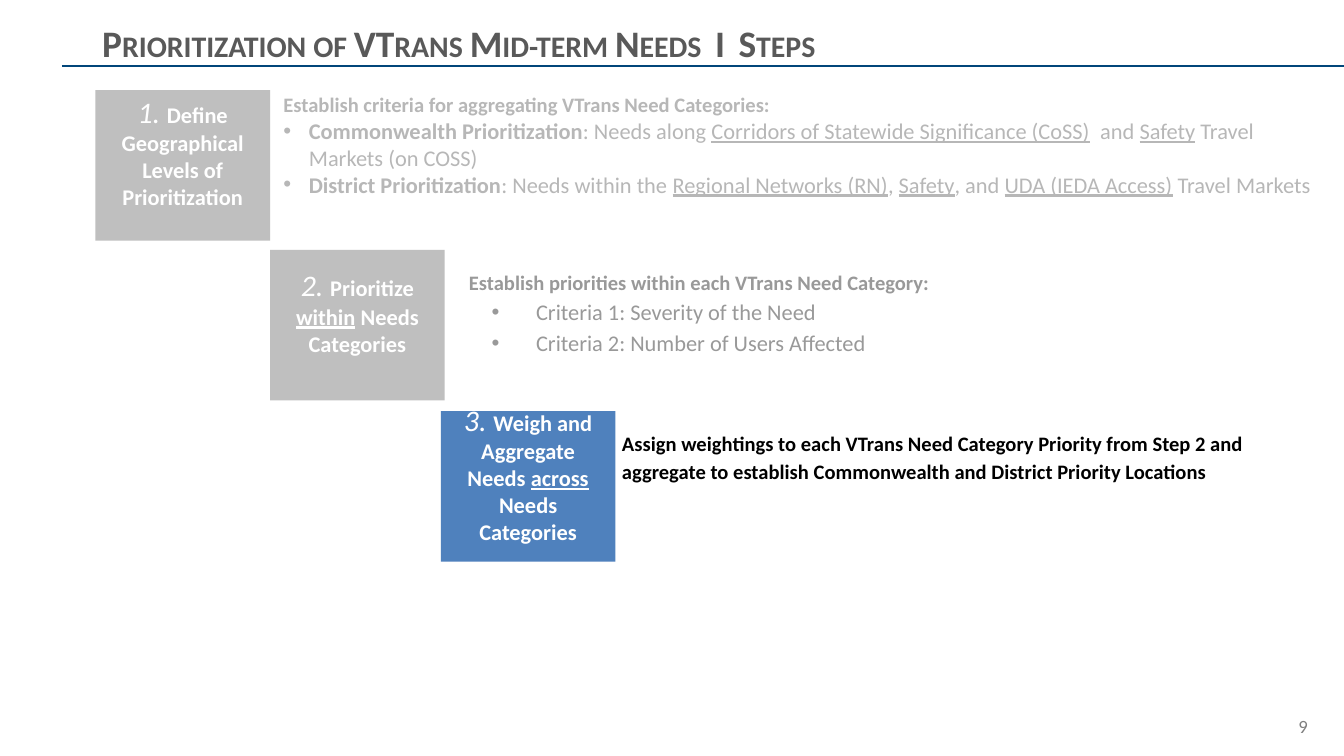
import pptx
import pptx.dml.color
import pptx.enum.shapes
import pptx.enum.text
import pptx.oxml
import pptx.oxml.ns
import pptx.util
from dataclasses import dataclass
from pptx.util import Inches


@dataclass(frozen=True)
class Theme:
    font: str = "Calibri"
    rule: str = "01467A"
    title: str = "595959"
    number: str = "7F7F7F"
    muted_box: str = "BFBFBF"
    active_box: str = "4F81BD"
    on_box: str = "FFFFFF"
    first_text: str = "B7B7B7"
    second_text: str = "999999"
    active_text: str = "000000"
    title_size: int = 20
    step_size: int = 16
    body_size: int = 12
    lead_size: int = 11
    number_size: int = 10


theme = Theme()
ALIGN = pptx.enum.text.PP_ALIGN
ANCHOR = pptx.enum.text.MSO_ANCHOR


def add_text_box(left, top, width, height, anchor=ANCHOR.TOP):
    box = slide.shapes.add_textbox(Inches(left), Inches(top), Inches(width), Inches(height))
    box.text_frame.word_wrap = True
    box.text_frame.vertical_anchor = anchor
    return box.text_frame


def write_runs(paragraph, runs, color):
    """Write (text, size, style) runs; style letters are b, i and u."""
    for text, size, style in runs:
        run = paragraph.add_run()
        run.text = text
        run.font.name = theme.font
        run.font.size = pptx.util.Pt(size)
        run.font.color.rgb = pptx.dml.color.RGBColor.from_string(color)
        run.font.bold = "b" in style
        run.font.italic = "i" in style
        run.font.underline = "u" in style


# Widescreen slide, 16:9
presentation = pptx.Presentation()
presentation.slide_width = Inches(10)
presentation.slide_height = Inches(10) * 9 // 16
slide = presentation.slides.add_slide(presentation.slide_layouts[6])

# Title rule
rule = slide.shapes.add_connector(
    pptx.enum.shapes.MSO_CONNECTOR.STRAIGHT,
    Inches(0.46), Inches(0.49), Inches(10), Inches(0.49))
rule.line.color.rgb = pptx.dml.color.RGBColor.from_string(theme.rule)
rule.line.width = pptx.util.Pt(0.75)
rule._element.spPr.append(pptx.oxml.parse_xml(
    f'<a:effectLst {pptx.oxml.ns.nsdecls("a")}/>'))

# Title in small capitals
frame = add_text_box(0.69, 0.15, 8.62, 0.34, ANCHOR.MIDDLE)
frame.margin_left = frame.margin_right = Inches(0.07)
frame.margin_top = frame.margin_bottom = Inches(0.04)
write_runs(frame.paragraphs[0],
           [("Prioritization of VTrans Mid-term Needs  I  Steps", theme.title_size, "b")],
           theme.title)
frame.paragraphs[0].runs[0].font._element.set("cap", "small")

# Staircase of step boxes
size = theme.body_size
steps = [
    (0.71, 0.67, theme.muted_box,
     [("Define Geographical Levels of Prioritization", size, "b")]),
    (2.01, 1.86, theme.muted_box,
     [("Prioritize ", size, "b"), ("within", size, "bu"), (" Needs Categories", size, "b")]),
    (3.28, 3.06, theme.active_box,
     [("Weigh and Aggregate Needs ", size, "b"), ("across", size, "bu"),
      (" Needs Categories", size, "b")]),
]
for number, (left, top, fill, label) in enumerate(steps, start=1):
    box = slide.shapes.add_shape(
        pptx.enum.shapes.MSO_SHAPE.RECTANGLE,
        Inches(left), Inches(top), Inches(1.3), Inches(1.12))
    box.shadow.inherit = False
    box.fill.solid()
    box.fill.fore_color.rgb = pptx.dml.color.RGBColor.from_string(fill)
    box.line.fill.background()
    frame = box.text_frame
    frame.word_wrap = True
    frame.vertical_anchor = ANCHOR.MIDDLE
    frame.margin_bottom = Inches(0.25)
    frame.paragraphs[0].alignment = ALIGN.CENTER
    write_runs(frame.paragraphs[0],
               [(f"{number}. ", theme.step_size, "i")] + label, theme.on_box)

# Descriptions: place, colour, bullet indent, bullet line spacing, lead line, bullets
descriptions = [
    ((2.01, 0.61, 7.99, 0.71), theme.first_text, 0.19, 1.0,
     "Establish criteria for aggregating VTrans Need Categories:",
     [[("Commonwealth Prioritization", size, "b"), (": Needs along ", size, ""),
       ("Corridors of Statewide Significance (CoSS)", size, "u"), ("  and ", size, ""),
       ("Safety", size, "u"), (" Travel Markets (on COSS)", size, "")],
      [("District Prioritization", size, "b"), (": Needs within the ", size, ""),
       ("Regional Networks (RN)", size, "u"), (", ", size, ""),
       ("Safety", size, "u"), (", and ", size, ""),
       ("UDA (IEDA Access)", size, "u"), (" Travel Markets", size, "")]]),
    ((3.39, 1.93, 6.31, 0.99), theme.second_text, 0.5, 1.15,
     "Establish priorities within each VTrans Need Category:",
     [[("Criteria 1: Severity of the Need", size, "")],
      [("Criteria 2: Number of Users Affected", size, "")]]),
    ((4.53, 3.13, 5.2, 0.3), theme.active_text, 0, 1.15,
     "Assign weightings to each VTrans Need Category Priority from Step 2 and "
     "aggregate to establish Commonwealth and District Priority Locations", []),
]
for place, color, indent, spacing, lead, bullets in descriptions:
    frame = add_text_box(*place)
    frame.paragraphs[0].line_spacing = 1.15
    write_runs(frame.paragraphs[0], [(lead, theme.lead_size, "b")], color)
    for runs in bullets:
        paragraph = frame.add_paragraph()
        properties = paragraph._p.get_or_add_pPr()
        properties.set("marL", str(Inches(indent)))
        properties.set("indent", str(-Inches(min(indent, 0.33))))
        for bullet in (f'<a:buClr %s><a:srgbClr val="{color}"/></a:buClr>',
                       '<a:buFont %s typeface="Arial"/>', '<a:buChar %s char="•"/>'):
            properties.append(pptx.oxml.parse_xml(bullet % pptx.oxml.ns.nsdecls("a")))
        paragraph.line_spacing = spacing
        write_runs(paragraph, runs, color)

# Slide number
frame = add_text_box(7.5, 5.25, 2.33, 0.3, ANCHOR.MIDDLE)
frame.paragraphs[0].alignment = ALIGN.RIGHT
write_runs(frame.paragraphs[0], [("9", theme.number_size, "")], theme.number)

presentation.save("out.pptx")
